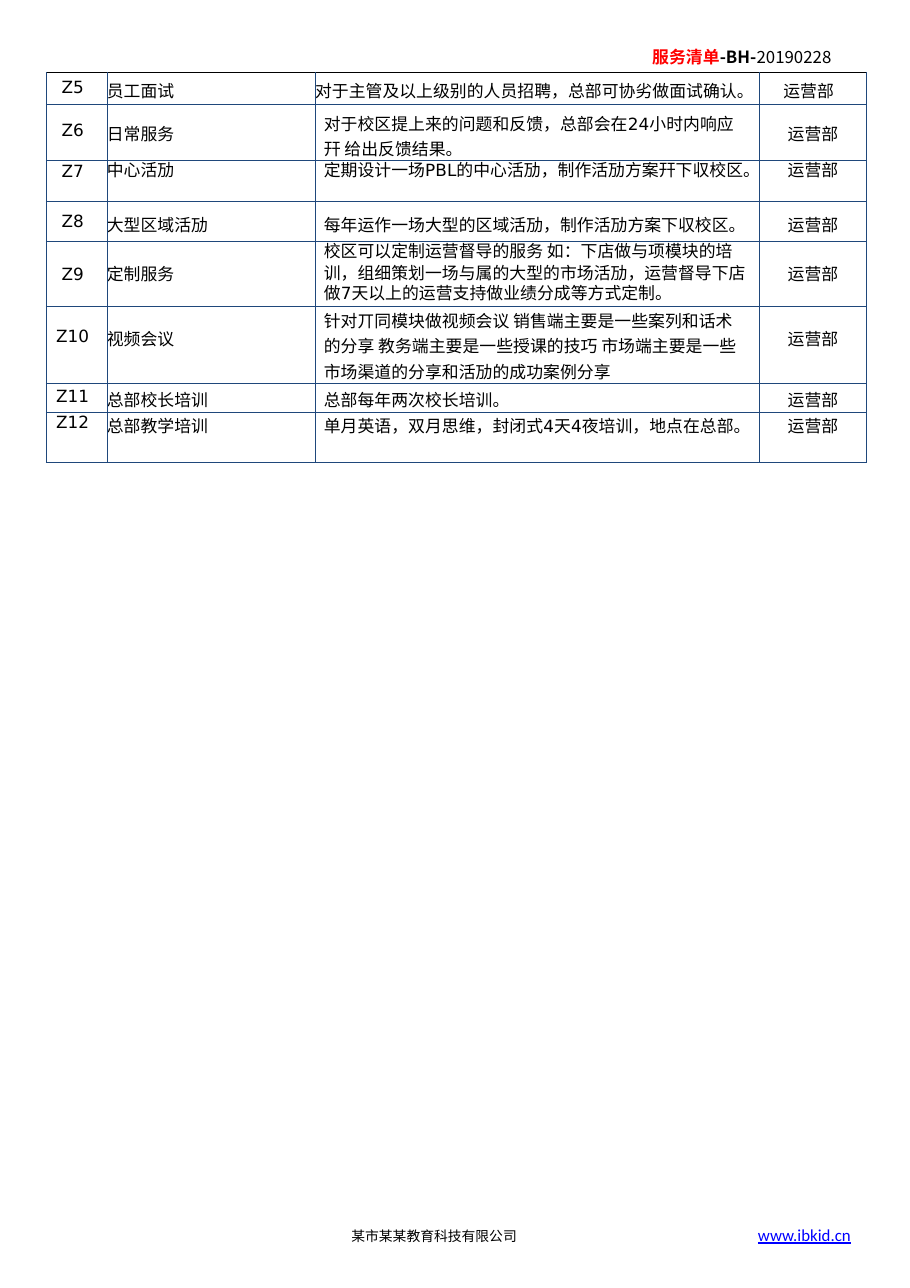
from dataclasses import dataclass
from itertools import groupby

from pptx import Presentation
from pptx import util as u
from pptx.dml.color import RGBColor
from pptx.enum import text as t
from pptx.oxml import parse_xml
from pptx.oxml.ns import nsdecls


@dataclass(frozen=True)
class Theme:
    ink: str = "000000"
    accent: str = "FF0000"
    link: str = "0000FF"
    border: str = "1F477B"
    latin: str = "DejaVu Sans"
    chinese: str = "Noto Sans CJK SC"
    web: str = "Calibri"
    body: float = 11
    footer: float = 9
    border_width: float = 0.5


@dataclass(frozen=True)
class Service:
    code: str
    name: str
    detail: tuple
    height: float
    tops: tuple
    line: float = None
    detail_lines: tuple = (None,)
    detail_insets: tuple = (0.08, 0.1)
    department_right: float = 0.25


THEME = Theme()
DEPARTMENT = "运营部"
COLUMNS = (0.55, 1.89, 4.03, 0.97)
SERVICES = (
    Service("Z5", "员工面试", ("对于主管及以上级别的人员招聘，总部可协劣做面试确认。",),
            0.29, (0.05, 0.05, 0.05), detail_insets=(0, 0), department_right=0.29),
    Service("Z6", "日常服务",
            ("对于校区提上来的问题和反馈，总部会在24小时内响应幵 给出反馈结果。",),
            0.48, (0.15, 0.15, 0.04), detail_lines=(1.06,)),
    Service("Z7", "中心活劢", ("定期设计一场PBL的中心活劢，制作活劢方案幵下収校区。",),
            0.2, (0.01, 0.01, 0.01), line=u.Pt(13), detail_lines=(u.Pt(13),)),
    Service("Z8", "大型区域活劢", ("每年运作一场大型的区域活劢，制作活劢方案下収校区。",),
            0.36, (0.09, 0.09, 0.09)),
    Service("Z9", "定制服务",
            ("校区可以定制运营督导的服务 如：下店做与项模块的培 训，"
             "组细策划一场与属的大型的市场活劢，运营督导下店",
             "做7天以上的运营支持做业绩分成等方式定制。"),
            0.59, (0.21, 0.18, 0), detail_lines=(u.Pt(13.9), u.Pt(13.1))),
    Service("Z10", "视频会议",
            ("针对丌同模块做视频会议 销售端主要是一些案列和话术",
             "的分享 教务端主要是一些授课的技巧 市场端主要是一些 "
             "市场渠道的分享和活劢的成功案例分享"),
            0.59, (0.19, 0.18, 0.01), detail_lines=(None, 1.06)),
    Service("Z11", "总部校长培训", ("总部每年两次校长培训。",),
            0.26, (0.03, 0.03, 0.03)),
    Service("Z12", "总部教学培训", ("单月英语，双月思维，封闭式4天4夜培训，地点在总部。",),
            0.21, (0.01, 0.01, 0.01)),
)


def is_latin(character):
    return character.isascii() and character.isalnum()


def write(paragraph, content, *, font=None, size=THEME.body, color=THEME.ink,
          bold=False, underline=False, align=t.PP_ALIGN.LEFT, line=None):
    paragraph.alignment = align
    if line is not None:
        paragraph.line_spacing = line
    if font:
        pieces = [(font, content)]
    else:
        pieces = [(THEME.latin if latin else THEME.chinese, "".join(group))
                  for latin, group in groupby(content, is_latin)]
    for face, piece in pieces:
        run = paragraph.add_run()
        run.text = piece
        run.font.name = face
        run.font.size = u.Pt(size)
        run.font.bold = bold
        run.font.underline = underline
        run.font.color.rgb = RGBColor.from_string(color)
        properties = run._r.get_or_add_rPr()
        properties.find("{*}latin").addnext(
            parse_xml(f'<a:ea {nsdecls("a")} typeface="{face}"/>'))


def outline(cell, top_color):
    properties = cell._tc.get_or_add_tcPr()
    for side in "LRTB":
        color = top_color if side == "T" else THEME.border
        properties.append(parse_xml(
            f'<a:ln{side} {nsdecls("a")} w="{u.Pt(THEME.border_width)}">'
            f'<a:solidFill><a:srgbClr val="{color}"/></a:solidFill></a:ln{side}>'))
    cell.fill.background()


def fill_cell(cell, lines, top, *, left=0, right=0, spacings=(None,),
              align=t.PP_ALIGN.LEFT, top_color=THEME.border):
    cell.margin_left, cell.margin_right = u.Inches(left), u.Inches(right)
    cell.margin_top, cell.margin_bottom = u.Inches(top), 0
    outline(cell, top_color)
    frame = cell.text_frame
    for index, (content, spacing) in enumerate(zip(lines, spacings)):
        paragraph = frame.add_paragraph() if index else frame.paragraphs[0]
        write(paragraph, content, line=spacing, align=align)


def add_services(slide):
    services = slide.shapes.add_table(
        len(SERVICES), len(COLUMNS), u.Inches(0.42), u.Inches(0.66),
        u.Inches(sum(COLUMNS)), u.Inches(sum(s.height for s in SERVICES))).table
    services.first_row = services.horz_banding = False
    for column, width in zip(services.columns, COLUMNS):
        column.width = u.Inches(width)
    for index, service in enumerate(SERVICES):
        row = services.rows[index]
        row.height = u.Inches(service.height)
        code, name, detail, department = row.cells
        code_top, name_top, detail_top = service.tops
        top_color = THEME.border if index else THEME.ink
        left, right = service.detail_insets
        spacings = (service.line,)
        fill_cell(code, (service.code,), code_top, right=0.07, spacings=spacings,
                  align=t.PP_ALIGN.CENTER, top_color=top_color)
        fill_cell(name, (service.name,), name_top, spacings=spacings,
                  top_color=top_color)
        fill_cell(detail, service.detail, detail_top, left=left, right=right,
                  spacings=service.detail_lines, top_color=top_color)
        fill_cell(department, (DEPARTMENT,), name_top, right=service.department_right,
                  spacings=spacings, align=t.PP_ALIGN.RIGHT, top_color=top_color)


def add_label(slide, left, top, width, height, *, inset_top=0):
    label = slide.shapes.add_textbox(*map(u.Inches, (left, top, width, height)))
    frame = label.text_frame
    frame.word_wrap = True
    frame.margin_left, frame.margin_top = u.Inches(0.01), u.Inches(inset_top)
    frame.margin_right = frame.margin_bottom = 0
    return frame.paragraphs[0]


def main():
    deck = Presentation()
    deck.slide_width, deck.slide_height = u.Inches(8.26), u.Inches(11.69)
    slide = deck.slides.add_slide(deck.slide_layouts[6])

    add_services(slide)

    website = add_label(slide, 6.87, 11.14, 0.87, 0.18)
    write(website, "www.ibkid.cn", font=THEME.web, color=THEME.link,
          underline=True, line=u.Pt(11.5))

    company = add_label(slide, 3.18, 11.15, 1.53, 0.15)
    write(company, "某市某某教育科技有限公司", size=THEME.footer, line=u.Pt(10.6))

    heading = add_label(slide, 5.91, 0.41, 1.72, 0.21, inset_top=0.01)
    write(heading, "服务清单", color=THEME.accent, bold=True)
    write(heading, "-BH-", font=THEME.chinese, bold=True)
    write(heading, "20190228", font=THEME.chinese)

    deck.save("out.pptx")


if __name__ == "__main__":
    main()
